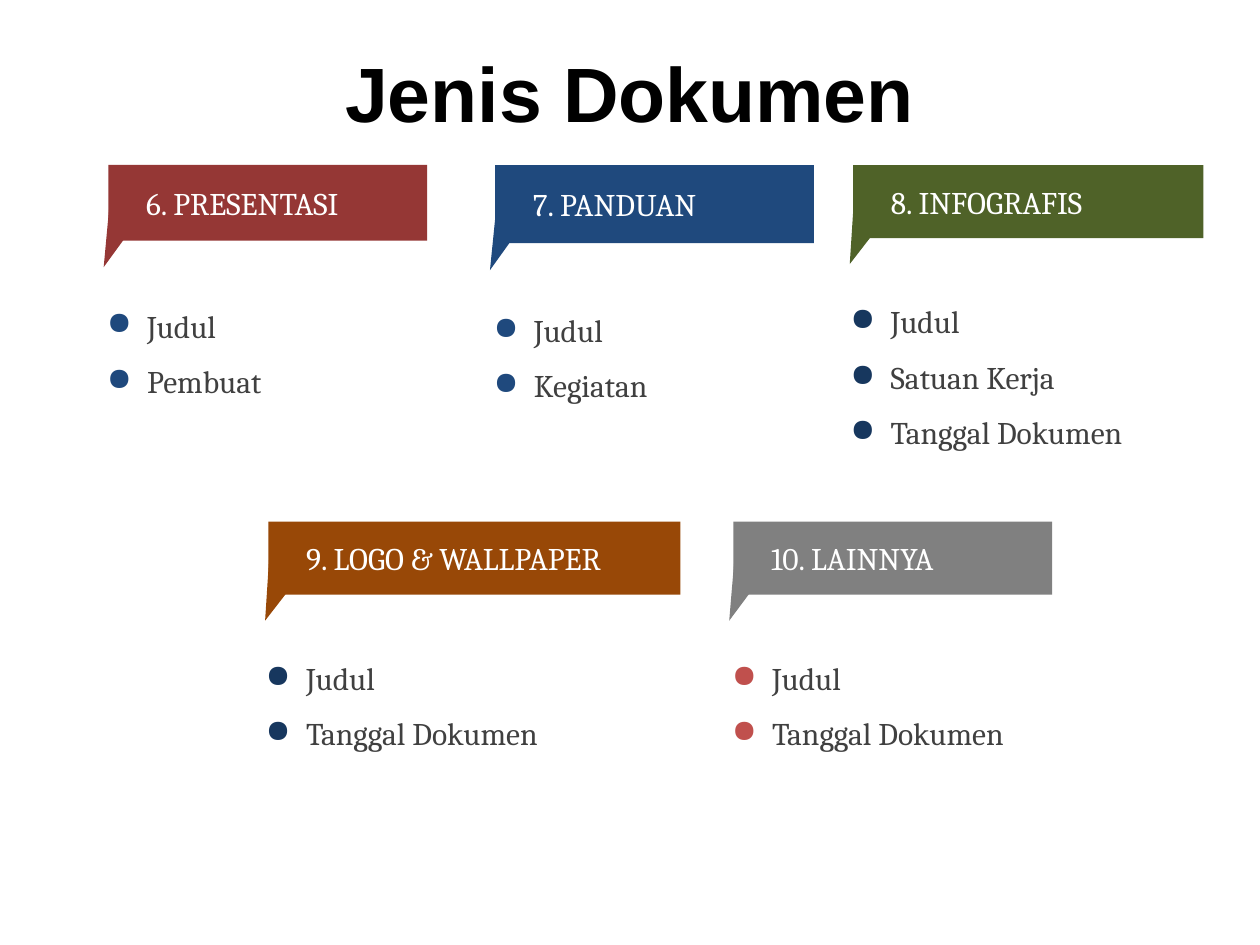
from lxml.etree import SubElement
from pptx import Presentation
from pptx.dml.color import RGBColor
from pptx.enum.shapes import MSO_SHAPE
from pptx.enum.text import MSO_ANCHOR, PP_ALIGN
from pptx.oxml.ns import qn
from pptx.util import Inches, Pt

BLACK = RGBColor(0x00, 0x00, 0x00)
WHITE = RGBColor(0xFF, 0xFF, 0xFF)
DARK = RGBColor(0x40, 0x40, 0x40)
RED = RGBColor(0x95, 0x37, 0x35)
BLUE = RGBColor(0x1F, 0x49, 0x7D)
GREEN = RGBColor(0x4F, 0x62, 0x28)
BROWN = RGBColor(0x98, 0x48, 0x07)
GRAY = RGBColor(0x80, 0x80, 0x80)
NAVY = RGBColor(0x17, 0x37, 0x5E)
ROSE = RGBColor(0xC0, 0x50, 0x4D)

deck = Presentation()
deck.slide_width, deck.slide_height = Inches(10), Inches(7.5)
COL = deck.slide_width / 100
ROW = deck.slide_height / 75
TOP, LOW = 13.1, 41.4
slide = deck.slides.add_slide(deck.slide_layouts[5])


def box(left, top, width, height):
    return int(left * COL), int(top * ROW), int(width * COL), int(height * ROW)


def style(item, tone, **form):
    for name, value in form.items():
        setattr(item, name, value)
    item.color.rgb = tone


title = slide.shapes.title
title.left, title.top, title.width, title.height = box(5, 3, 90, 8.5)
title.text_frame.text = "Jenis Dokumen"
title.text_frame.vertical_anchor = MSO_ANCHOR.MIDDLE
head = title.text_frame.paragraphs[0]
head.alignment = PP_ALIGN.CENTER
style(head.runs[0].font, BLACK, name="Arial", size=Pt(44), bold=True)

BODY = {"name": "Cambria", "size": Pt(18)}
INSET = {
    "margin_left": Inches(0.3),
    "margin_right": Inches(0.1),
    "margin_top": Inches(0.05),
    "margin_bottom": Inches(0.05),
    "vertical_anchor": MSO_ANCHOR.MIDDLE,
    "word_wrap": True,
}
CARDS = [
    ("8. INFOGRAFIS", ["Judul", "Satuan Kerja", "Tanggal Dokumen"],
     67.7, TOP, 27.8, 5.8, 4.4, 30.7, 18.8, GREEN, NAVY),
    ("9. LOGO & WALLPAPER", ["Judul", "Tanggal Dokumen"],
     21.3, LOW, 32.7, 5.8, 4.4, 30.7, 18.8, BROWN, NAVY),
    ("10. LAINNYA", ["Judul", "Tanggal Dokumen"],
     58.2, LOW, 25.3, 5.8, 4.1, 27.9, 17.2, GRAY, ROSE),
    ("7. PANDUAN", ["Judul", "Kegiatan"],
     39.3, TOP, 25.3, 6.2, 4.1, 27.9, 19.9, BLUE, BLUE),
    ("6. PRESENTASI", ["Judul", "Pembuat"],
     8.6, TOP, 25.3, 6.0, 4.1, 27.9, 19.3, RED, BLUE),
]

for name, items, left, top, width, tall, tip, span, deep, tone, dot in CARDS:
    card = slide.shapes.add_group_shape().shapes
    edge = left - tip * 0.27

    notes = card.add_textbox(*box(edge, top + tall * 1.64, span, deep)).text_frame
    notes.word_wrap = True
    for rank, item in enumerate(items):
        para = notes.add_paragraph() if rank else notes.paragraphs[0]
        para.text = item
        props = para._p.get_or_add_pPr()
        props.set("marL", str(Inches(0.32)))
        props.set("indent", str(-Inches(0.32)))
        hue = SubElement(props, qn("a:buClr"))
        SubElement(hue, qn("a:srgbClr")).set("val", str(dot))
        SubElement(props, qn("a:buChar")).set("char", "●")
        para.line_spacing = 1.3
        para.space_before = Pt(3.6 if rank else 0)
        style(para.runs[0].font, DARK, **BODY)

    tail = card.add_shape(MSO_SHAPE.ISOSCELES_TRIANGLE,
                          *box(edge, top + 0.9, tip, tall * 1.24))
    tail.rotation = 200.7
    bar = card.add_shape(MSO_SHAPE.RECTANGLE, *box(left, top, width, tall))
    for part in (tail, bar):
        part.shadow.inherit = False
        part.fill.solid()
        part.fill.fore_color.rgb = tone
        part.line.fill.background()

    frame = bar.text_frame
    for key, value in INSET.items():
        setattr(frame, key, value)
    frame.text = name
    frame.paragraphs[0].alignment = PP_ALIGN.LEFT
    style(frame.paragraphs[0].runs[0].font, WHITE, **BODY)

deck.save("out.pptx")
